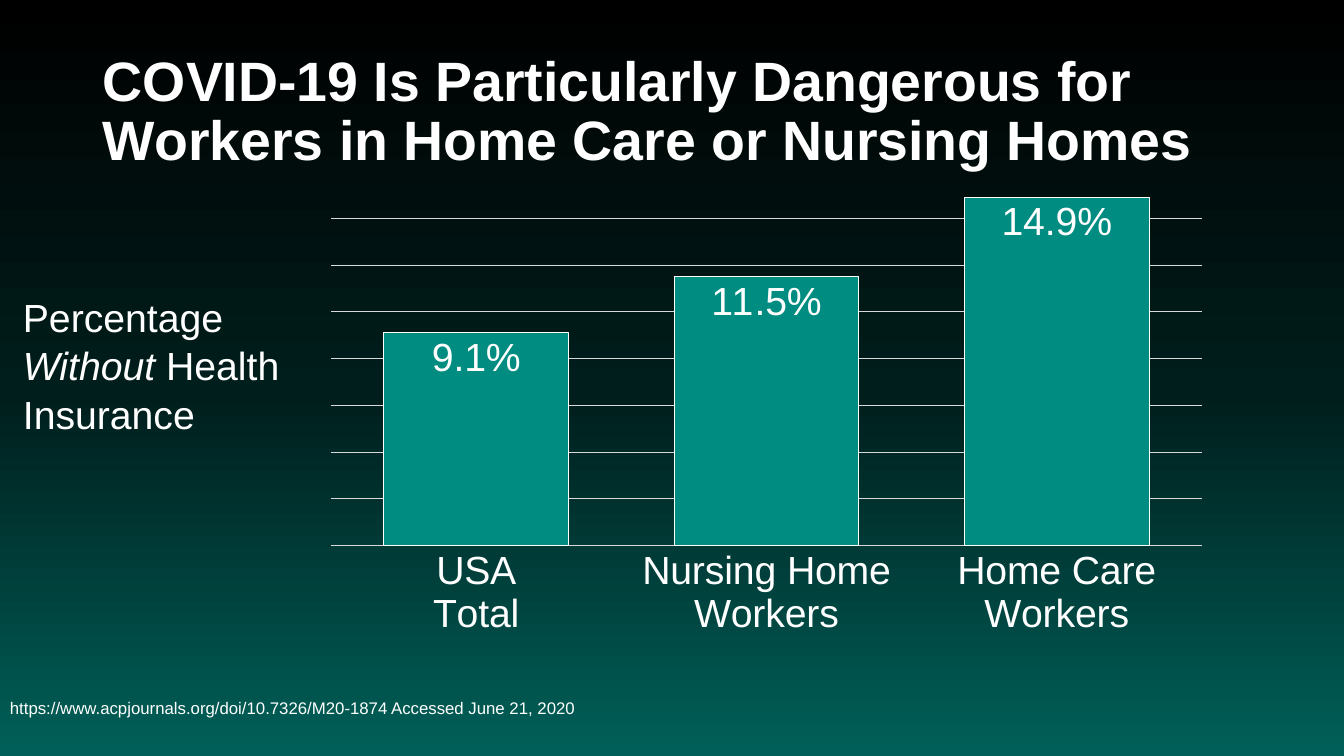
from copy import deepcopy

from pptx import Presentation
from pptx.chart.data import CategoryChartData as ChartData
from pptx.dml.color import RGBColor as RGB
from pptx.enum.chart import XL_CHART_TYPE as CHART
from pptx.enum.chart import XL_LABEL_POSITION as LABEL_POS
from pptx.enum.chart import XL_TICK_MARK as TICK
from pptx.enum.text import MSO_ANCHOR as ANCHOR
from pptx.oxml.ns import qn
from pptx.util import Emu, Pt

PX = 914400 / 100.8
FONT = "Arial"
COLORS = {
    "text": "FFFFFF",
    "bar": "008C81",
    "grid": "D9D9D9",
    "top": "000000",
    "middle": "001E1C",
    "bottom": "006059",
}


def px(*lengths):
    return [Emu(round(n * PX)) for n in lengths]


def rgb(name):
    return RGB.from_string(COLORS[name])


def style_font(font, size, bold=False, italic=False):
    font.name = FONT
    font.size = Pt(size)
    font.bold = bold
    font.italic = italic
    font.color.rgb = rgb("text")


def style_line(line, color):
    line.color.rgb = rgb(color)
    line.width = Pt(0.75)


def add_background(s, stops):
    fill = s.background.fill
    fill.gradient()
    fill.gradient_angle = 270
    gs_list = s.element.find(".//" + qn("a:gsLst"))
    while len(gs_list) < len(stops):
        gs_list.append(deepcopy(gs_list[-1]))
    for stop, (position, color) in zip(fill.gradient_stops, stops):
        stop.position = position
        stop.color.rgb = rgb(color)


def add_text(s, text, box, size, bold=False, italic="", spacing=0.9, anchor=ANCHOR.MIDDLE):
    tf = s.shapes.add_textbox(*px(*box)).text_frame
    tf.word_wrap = True
    tf.vertical_anchor = anchor
    p = tf.paragraphs[0]
    p.line_spacing = spacing
    for i, line in enumerate(text.split("\n")):
        if i:
            p.add_line_break()
        before, word, after = line.partition(italic) if italic else (line, "", "")
        for part in filter(None, (before, word, after)):
            r = p.add_run()
            r.text = part
            style_font(r.font, size, bold, part == italic)


def add_bars(s, values, box, size):
    data = ChartData(number_format="0.0%")
    data.categories = list(values)
    data.add_series("Series 1", list(values.values()))
    chart = s.shapes.add_chart(CHART.COLUMN_CLUSTERED, *px(*box), data).chart
    chart.has_title = False
    chart.has_legend = False
    style_font(chart.font, size)

    cat_axis = chart.category_axis
    cat_axis.major_tick_mark = TICK.NONE
    cat_axis.minor_tick_mark = TICK.NONE
    style_font(cat_axis.tick_labels.font, size)
    style_line(cat_axis.format.line, "grid")

    val_axis = chart.value_axis
    val_axis.visible = False
    val_axis.minimum_scale = 0
    val_axis.maximum_scale = 0.1499
    val_axis.major_unit = 0.02
    val_axis.has_major_gridlines = True
    style_line(val_axis.major_gridlines.format.line, "grid")

    plot = chart.plots[0]
    plot.vary_by_categories = False
    plot.gap_width = 57
    plot.overlap = -27
    bars = plot.series[0]
    bars.format.fill.solid()
    bars.format.fill.fore_color.rgb = rgb("bar")
    style_line(bars.format.line, "text")

    labels = bars.data_labels
    labels.show_value = True
    labels.position = LABEL_POS.INSIDE_END
    labels.number_format = "0.0%"
    labels.number_format_is_linked = False
    style_font(labels.font, size)


def main():
    prs = Presentation()
    prs.slide_width, prs.slide_height = px(1344, 756)
    s = prs.slides.add_slide(prs.slide_layouts[6])
    add_background(s, [(0, "top"), (0.52, "middle"), (1, "bottom")])
    add_text(
        s,
        "COVID-19 Is Particularly Dangerous for \nWorkers in Home Care or Nursing Homes",
        (93, 40, 1159, 146),
        39.6,
        bold=True,
    )
    add_text(
        s,
        "https://www.acpjournals.org/doi/10.7326/M20-1874 Accessed June 21, 2020",
        (0, 663, 907, 93),
        12,
    )
    rates = {
        "USA\nTotal": 0.091,
        "Nursing Home\nWorkers": 0.115,
        "Home Care\nWorkers": 0.149,
    }
    add_bars(s, rates, (313, 186, 907, 459), 28)
    add_text(
        s,
        "Percentage Without Health Insurance",
        (13, 286, 347, 152),
        28,
        italic="Without",
        spacing=1.04,
        anchor=ANCHOR.TOP,
    )
    prs.save("out.pptx")


if __name__ == "__main__":
    main()
